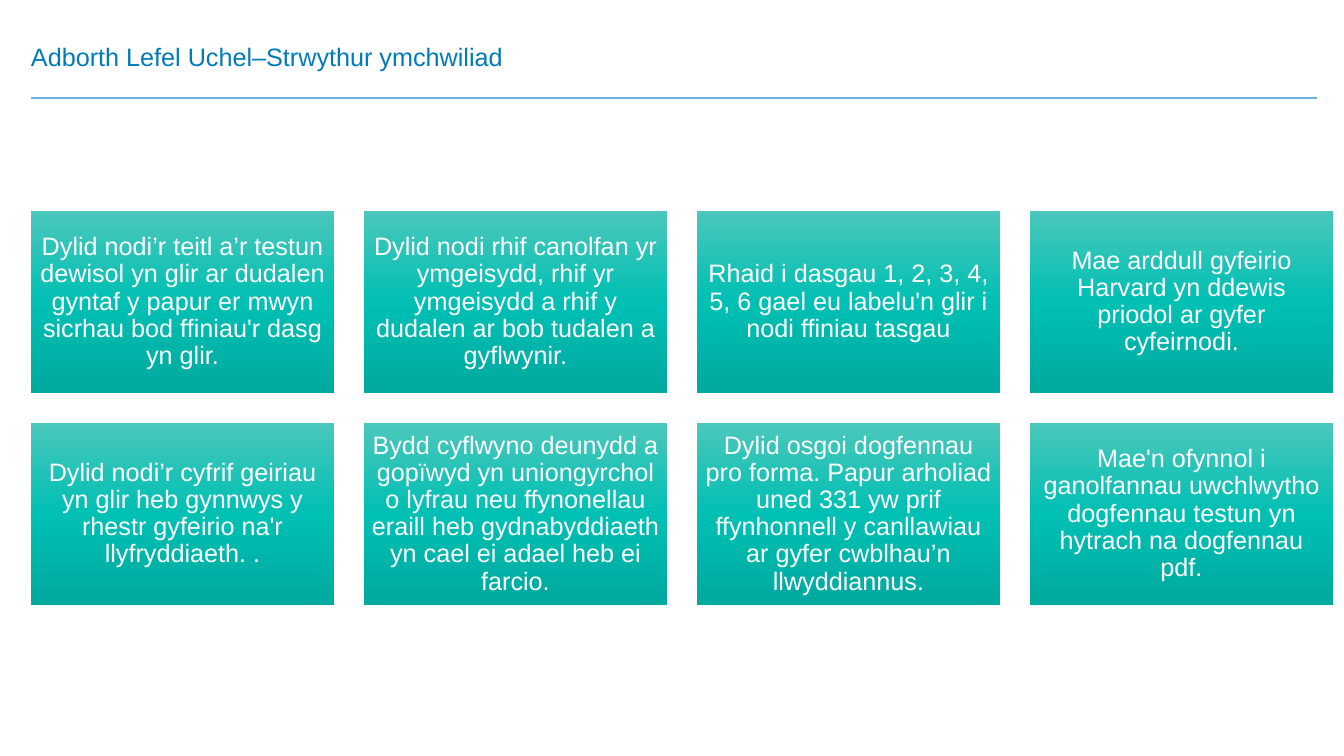
from copy import deepcopy
from pptx import Presentation, util as u
from pptx.dml.color import RGBColor
from pptx.enum import shapes, text
from pptx.oxml import ns
from lxml import etree

HUES = {"title": "007BB9", "rule": "65B2E6", "text": "FFFFFF",
        "top": "4BC7BC", "mid": "00BFB3", "base": "00AA9F"}

POINTS = [
    "Dylid nodi’r teitl a’r testun dewisol yn glir ar dudalen gyntaf y papur er mwyn sicrhau bod ffiniau'r dasg yn glir.",
    "Dylid nodi rhif canolfan yr ymgeisydd, rhif yr ymgeisydd a rhif y dudalen ar bob tudalen a gyflwynir.",
    "Rhaid i dasgau 1, 2, 3, 4, 5, 6 gael eu labelu'n glir i nodi ffiniau tasgau",
    "Mae arddull gyfeirio Harvard yn ddewis priodol ar gyfer cyfeirnodi.",
    "Dylid nodi’r cyfrif geiriau yn glir heb gynnwys y rhestr gyfeirio na'r llyfryddiaeth. .",
    "Bydd cyflwyno deunydd a gopïwyd yn uniongyrchol o lyfrau neu ffynonellau eraill heb gydnabyddiaeth yn cael ei adael heb ei farcio.",
    "Dylid osgoi dogfennau pro forma. Papur arholiad uned 331 yw prif ffynhonnell y canllawiau ar gyfer cwblhau’n llwyddiannus.",
    "Mae'n ofynnol i ganolfannau uwchlwytho dogfennau testun yn hytrach na dogfennau pdf.",
]


def px(n):
    return u.Emu(round(n * 914400 / 100.8))


def hue(name):
    return RGBColor.from_string(HUES[name])


class Deck:
    font = "Arial"
    size = u.Pt(18)

    def __init__(self, wide, high):
        self.prs = Presentation()
        self.prs.slide_width, self.prs.slide_height = px(wide), px(high)
        self.slide = self.prs.slides.add_slide(self.prs.slide_layouts[6])

    def label(self, shape, words, tint, align, anchor, inset):
        frame = shape.text_frame
        frame.word_wrap = True
        frame.vertical_anchor = anchor
        frame.margin_left = frame.margin_right = px(inset)
        frame.margin_top = frame.margin_bottom = px(inset)
        para = frame.paragraphs[0]
        para.text = words
        para.alignment = align
        para.line_spacing = 0.9
        para.font.name, para.font.size = self.font, self.size
        para.font.color.rgb = hue(tint)

    def title(self, words, x, y, w, h):
        box = self.slide.shapes.add_textbox(px(x), px(y), px(w), px(h))
        self.label(box, words, "title", text.PP_ALIGN.LEFT, text.MSO_ANCHOR.BOTTOM, 0)

    def rule(self, x, y, end):
        line = self.slide.shapes.add_connector(
            shapes.MSO_CONNECTOR.STRAIGHT, px(x), px(y), px(end), px(y))
        line.line.color.rgb = hue("rule")
        line.line.width = u.Pt(1.75)
        etree.SubElement(line._element.spPr, ns.qn("a:effectLst"))

    def card(self, words, x, y, w, h):
        card = self.slide.shapes.add_shape(
            shapes.MSO_SHAPE.RECTANGLE, px(x), px(y), px(w), px(h))
        card.shadow.inherit = False
        card.line.fill.background()
        self.shade(card)
        self.label(card, words, "text", text.PP_ALIGN.CENTER, text.MSO_ANCHOR.MIDDLE, 7)

    def shade(self, shape):
        shape.fill.gradient()
        shape.fill.gradient_angle = 270
        stops = shape._element.spPr.find(".//" + ns.qn("a:gsLst"))
        stops.append(deepcopy(stops[0]))
        for stop, name, place in zip(shape.fill.gradient_stops,
                                     ("top", "mid", "base"), (0, 0.5, 1)):
            stop.color.rgb = hue(name)
            stop.position = place


def main():
    deck = Deck(1344, 756)
    deck.rule(31, 98, 1317)
    deck.title("Adborth Lefel Uchel–Strwythur ymchwiliad", 31, 23, 1127, 49)
    for i, words in enumerate(POINTS):
        row, col = divmod(i, 4)
        deck.card(words, 31 + col * 333, 211 + row * 212, 303, 182)
    deck.prs.save("out.pptx")


if __name__ == "__main__":
    main()
